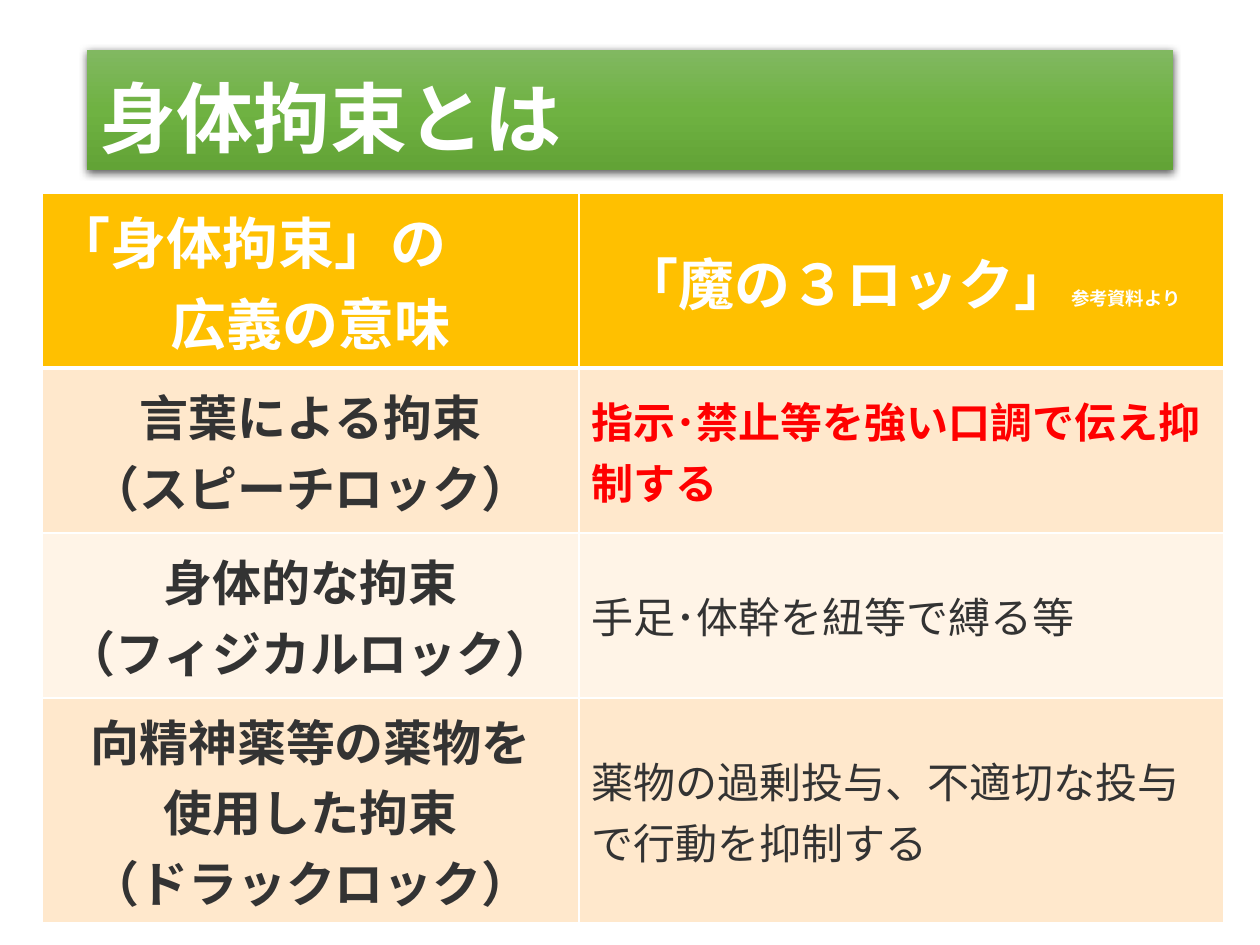
import dataclasses

import lxml.etree
import pptx
import pptx.dml.color
import pptx.enum.text
import pptx.oxml
import pptx.oxml.ns
import pptx.util

RGBColor = pptx.dml.color.RGBColor
ANCHOR = pptx.enum.text.MSO_ANCHOR
ALIGN = pptx.enum.text.PP_ALIGN

PX = 914400 / 126
FONT = "Noto Sans CJK JP"
WHITE = RGBColor(0xFF, 0xFF, 0xFF)
BLACK = RGBColor(0x00, 0x00, 0x00)
DARK = RGBColor(0x33, 0x33, 0x33)
RED = RGBColor(0xFF, 0x00, 0x00)
AMBER = RGBColor(0xFF, 0xC0, 0x00)
PEACH = RGBColor(0xFF, 0xE8, 0xCC)
CREAM = RGBColor(0xFF, 0xF4, 0xE7)
GREENS = (
    (0, RGBColor(0x81, 0xB8, 0x61)),
    (50, RGBColor(0x6F, 0xB2, 0x42)),
    (100, RGBColor(0x62, 0xA3, 0x36)),
)

COLUMN_WIDTHS = (537, 645)
ROW_HEIGHTS = (165, 165, 165, 186)


@dataclasses.dataclass(frozen=True)
class Run:
    text: str
    size: float
    color: RGBColor = DARK
    bold: bool = True


@dataclasses.dataclass(frozen=True)
class Para:
    runs: tuple[Run, ...]
    align: ALIGN = ALIGN.LEFT


@dataclasses.dataclass(frozen=True)
class Row:
    fill: RGBColor
    cells: tuple[tuple[Para, ...], tuple[Para, ...]]


def lock_name(*lines: str) -> tuple[Para, ...]:
    return tuple(Para((Run(line, 28),), ALIGN.CENTER) for line in lines)


def explanation(text: str, color: RGBColor = DARK, bold: bool = False) -> tuple[Para, ...]:
    return (Para((Run(text, 24, color, bold),)),)


ROWS = (
    Row(AMBER, (
        (Para((Run("「身体拘束」の", 32, WHITE),)),
         Para((Run("広義の意味", 32, WHITE),), ALIGN.CENTER)),
        (Para((Run("「魔の３ロック」", 32, WHITE), Run("参考資料より", 10.5, WHITE)),
              ALIGN.CENTER),),
    )),
    Row(PEACH, (
        lock_name("言葉による拘束", "（スピーチロック）"),
        explanation("指示･禁止等を強い口調で伝え抑制する", RED, True),
    )),
    Row(CREAM, (
        lock_name("身体的な拘束", "（フィジカルロック）"),
        explanation("手足･体幹を紐等で縛る等"),
    )),
    Row(PEACH, (
        lock_name("向精神薬等の薬物を", "使用した拘束", "（ドラックロック）"),
        explanation("薬物の過剰投与、不適切な投与で行動を抑制する"),
    )),
)


def px(n: int) -> pptx.util.Emu:
    return pptx.util.Emu(round(n * PX))


def write(tf: pptx.text.text.TextFrame, paras: tuple[Para, ...]) -> None:
    for i, para in enumerate(paras):
        p = tf.add_paragraph() if i else tf.paragraphs[0]
        p.alignment = para.align
        for run in para.runs:
            r = p.add_run()
            r.text = run.text
            r.font.size = pptx.util.Pt(run.size)
            r.font.bold = run.bold
            r.font.color.rgb = run.color
            r.font.name = FONT
            ea = lxml.etree.SubElement(r.font._element, pptx.oxml.ns.qn("a:ea"))
            ea.set("typeface", FONT)


def add_effects(sp: pptx.shapes.base.BaseShape) -> None:
    """Give the title bar its three-stop gradient and soft shadow."""
    ns = pptx.oxml.ns.nsdecls("a")
    stops = "".join(
        f'<a:gs pos="{pos * 1000}"><a:srgbClr val="{color}"/></a:gs>'
        for pos, color in GREENS
    )
    for xml in (
        f'<a:prstGeom {ns} prst="rect"><a:avLst/></a:prstGeom>',
        f'<a:gradFill {ns} rotWithShape="1"><a:gsLst>{stops}</a:gsLst>'
        '<a:lin ang="5400000" scaled="0"/></a:gradFill>',
        f'<a:effectLst {ns}><a:outerShdw blurRad="57150" dist="19050" dir="5400000"'
        f' algn="ctr" rotWithShape="0"><a:srgbClr val="{BLACK}">'
        '<a:alpha val="63000"/></a:srgbClr></a:outerShdw></a:effectLst>',
    ):
        sp._element.spPr.append(pptx.oxml.parse_xml(xml))


def add_title(slide: pptx.slide.Slide) -> None:
    sp = slide.shapes.title
    sp.left, sp.top, sp.width, sp.height = map(px, (87, 50, 1086, 120))
    add_effects(sp)
    tf = sp.text_frame
    tf.auto_size = pptx.enum.text.MSO_AUTO_SIZE.NONE
    tf.word_wrap = True
    tf.vertical_anchor = ANCHOR.BOTTOM
    write(tf, (Para((Run("身体拘束とは", 44, WHITE),)),))
    tf.paragraphs[0].line_spacing = 0.9


def set_header_borders(cell: pptx.table._Cell) -> None:
    ns = pptx.oxml.ns.nsdecls("a")
    tc_pr = cell._tc.get_or_add_tcPr()
    for i, (side, points) in enumerate((("L", 1), ("R", 1), ("T", 1), ("B", 3))):
        tc_pr.insert(i, pptx.oxml.parse_xml(
            f'<a:ln{side} {ns} w="{points * 12700}"><a:solidFill>'
            f'<a:srgbClr val="{WHITE}"/></a:solidFill></a:ln{side}>'
        ))


def add_lock_table(slide: pptx.slide.Slide) -> None:
    table = slide.shapes.add_table(
        len(ROWS), len(COLUMN_WIDTHS), px(42), px(193),
        px(sum(COLUMN_WIDTHS)), px(sum(ROW_HEIGHTS)),
    ).table
    for column, width in zip(table.columns, COLUMN_WIDTHS):
        column.width = px(width)
    for i, (row, height) in enumerate(zip(ROWS, ROW_HEIGHTS)):
        table.rows[i].height = px(height)
        for j, paras in enumerate(row.cells):
            cell = table.cell(i, j)
            cell.vertical_anchor = ANCHOR.MIDDLE
            cell.fill.solid()
            cell.fill.fore_color.rgb = row.fill
            write(cell.text_frame, paras)
            if i == 0:
                set_header_borders(cell)


def main() -> None:
    prs = pptx.Presentation()
    prs.slide_width, prs.slide_height = px(1260), px(945)
    slide = prs.slides.add_slide(prs.slide_layouts[5])
    add_title(slide)
    add_lock_table(slide)
    prs.save("out.pptx")


if __name__ == "__main__":
    main()
